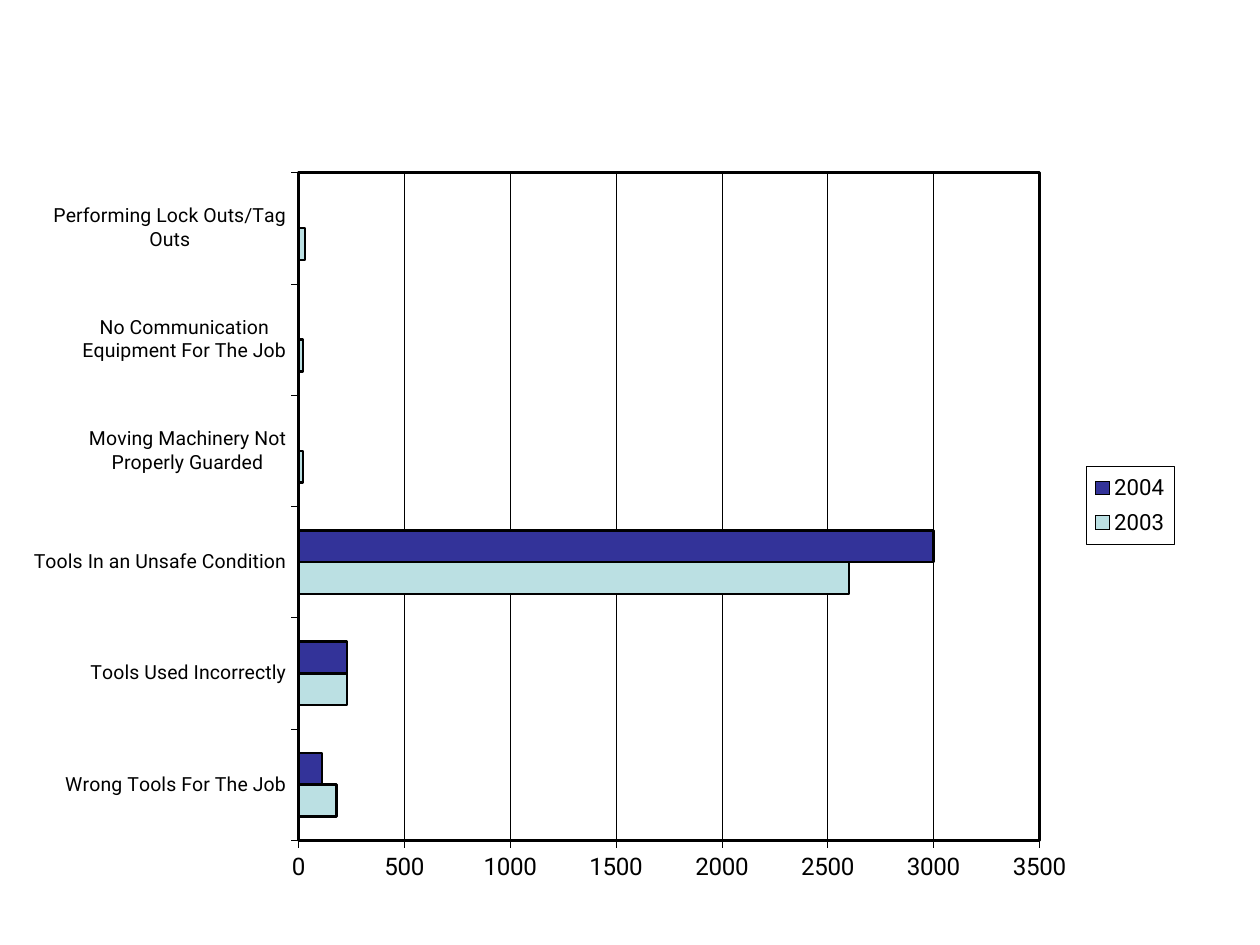
import pptx
import pptx.chart.data
import pptx.dml.color
import pptx.enum.chart
import pptx.oxml
import pptx.oxml.ns
import pptx.util
from pptx.util import Inches

COLORS = {"ink": "000000", "2003": "BBE0E3", "2004": "333399", "paper": "FFFFFF"}
FONT = "Roboto"
CHART_BOX = (0.26, 1.21, 9.11, 6.04)
PLOT_BOX = (2.37, 1.37, 5.88, 5.3)
LEGEND_BOX = (8.62, 3.7, 0.7, 0.62)
CATEGORIES = [
    "Wrong Tools For The Job",
    "Tools Used Incorrectly",
    "Tools In an Unsafe Condition",
    "Moving Machinery Not Properly Guarded",
    "No Communication Equipment For The Job",
    "Performing Lock Outs/Tag Outs",
]
INCIDENTS = {
    "2003": [180, 230, 2600, 20, 20, 30],
    "2004": [110, 230, 3000, 0, 0, 0],
}


def color(name):
    return pptx.dml.color.RGBColor.from_string(COLORS[name])


def set_font(font, size, bold=False):
    font.name = FONT
    font.size = pptx.util.Pt(size)
    font.bold = bold
    font.color.rgb = color("ink")


def set_line(line, width):
    line.color.rgb = color("ink")
    line.width = pptx.util.Pt(width)


def layout_element(box, inner=False):
    chart_left, chart_top, chart_width, chart_height = CHART_BOX
    left, top, width, height = box
    fractions = (
        (left - chart_left) / chart_width,
        (top - chart_top) / chart_height,
        width / chart_width,
        height / chart_height,
    )
    target = '<c:layoutTarget val="inner"/>' if inner else ""
    modes = '<c:xMode val="edge"/><c:yMode val="edge"/>'
    sizes = "".join(
        f'<c:{tag} val="{value:.4f}"/>' for tag, value in zip("xywh", fractions)
    )
    return pptx.oxml.parse_xml(
        f'<c:layout {pptx.oxml.ns.nsdecls("c")}><c:manualLayout>'
        f"{target}{modes}{sizes}</c:manualLayout></c:layout>"
    )


def frame_element(width):
    return pptx.oxml.parse_xml(
        f'<c:spPr {pptx.oxml.ns.nsdecls("c", "a")}>'
        f'<a:solidFill><a:srgbClr val="{COLORS["paper"]}"/></a:solidFill>'
        f'<a:ln w="{pptx.util.Pt(width)}"><a:solidFill>'
        f'<a:srgbClr val="{COLORS["ink"]}"/></a:solidFill></a:ln></c:spPr>'
    )


def remove_layout(element):
    for old in element.findall(pptx.oxml.ns.qn("c:layout")):
        element.remove(old)


def format_axis(axis, size):
    set_font(axis.tick_labels.font, size)
    set_line(axis.format.line, 0.35)
    axis.major_tick_mark = pptx.enum.chart.XL_TICK_MARK.OUTSIDE
    axis.minor_tick_mark = pptx.enum.chart.XL_TICK_MARK.NONE


def format_value_axis(axis):
    format_axis(axis, 13.8)
    axis.minimum_scale = 0
    axis.maximum_scale = 3500
    axis.major_unit = 500
    axis.has_major_gridlines = True
    set_line(axis.major_gridlines.format.line, 0.35)


def format_bars(plot):
    plot.gap_width = 150
    plot.overlap = 0
    plot.vary_by_categories = False
    for series in plot.series:
        series.format.fill.solid()
        series.format.fill.fore_color.rgb = color(series.name)
        set_line(series.format.line, 1.38)


def format_plot_area(chart):
    area = chart.plots[0]._element.getparent()
    remove_layout(area)
    area.insert(0, layout_element(PLOT_BOX, inner=True))
    area.append(frame_element(1.38))


def format_legend(chart):
    chart.has_legend = True
    legend = chart.legend
    legend.position = pptx.enum.chart.XL_LEGEND_POSITION.RIGHT
    legend.include_in_layout = False
    set_font(legend.font, 12.7)
    element = legend._element
    remove_layout(element)
    position = element.find(pptx.oxml.ns.qn("c:legendPos"))
    position.addnext(layout_element(LEGEND_BOX))
    text = element.find(pptx.oxml.ns.qn("c:txPr"))
    text.addprevious(frame_element(0.35))


def add_incident_chart(page):
    data = pptx.chart.data.CategoryChartData()
    data.categories = CATEGORIES
    for year, values in INCIDENTS.items():
        data.add_series(year, values)
    chart = page.shapes.add_chart(
        pptx.enum.chart.XL_CHART_TYPE.BAR_CLUSTERED,
        *map(Inches, CHART_BOX),
        data,
    ).chart
    chart.has_title = False
    set_font(chart.font, 24.9, bold=True)
    format_bars(chart.plots[0])
    format_axis(chart.category_axis, 11.1)
    format_value_axis(chart.value_axis)
    format_plot_area(chart)
    format_legend(chart)


def main():
    deck = pptx.Presentation()
    deck.slide_width = Inches(10)
    deck.slide_height = Inches(7.5)
    page = deck.slides.add_slide(deck.slide_layouts[6])
    add_incident_chart(page)
    deck.save("out.pptx")


if __name__ == "__main__":
    main()
